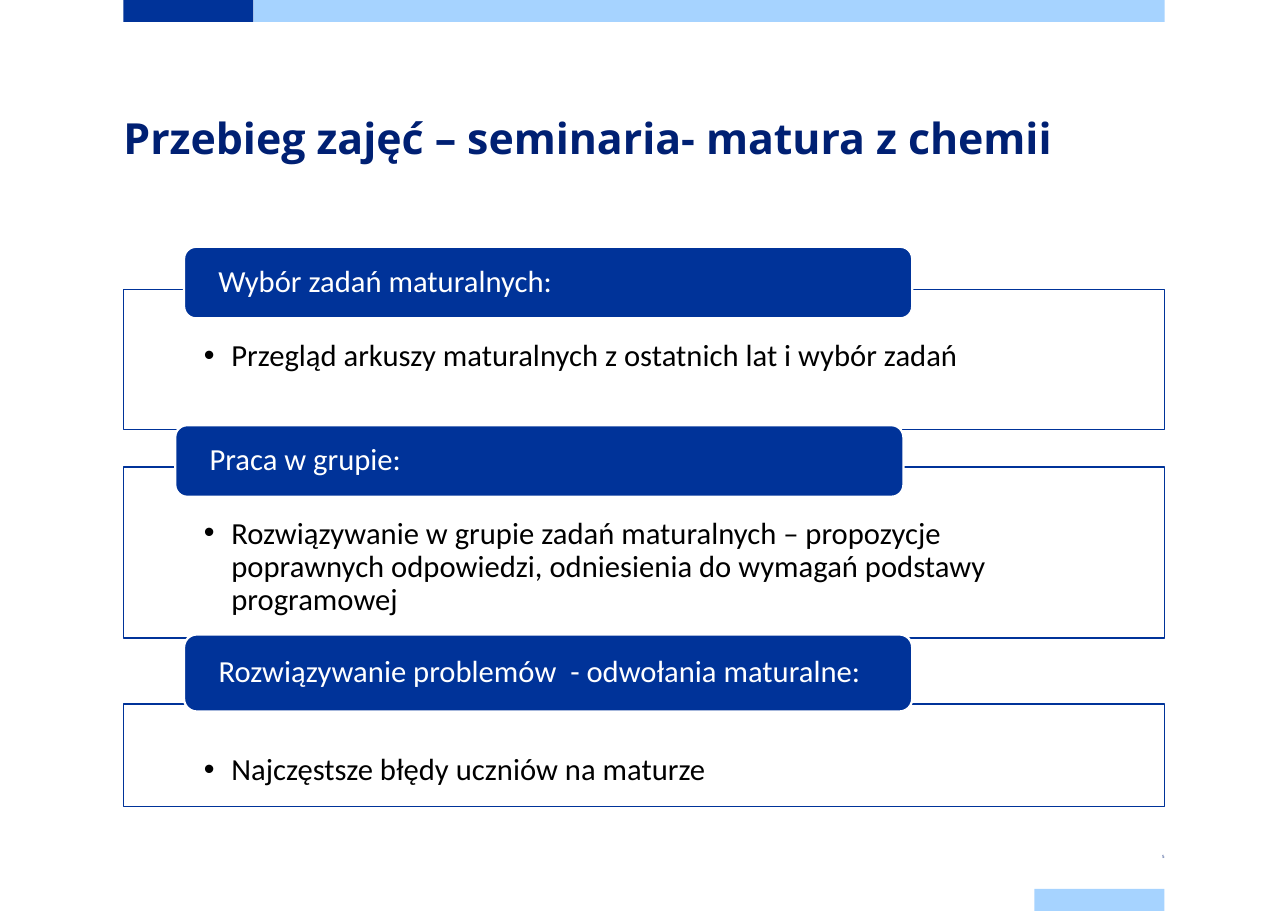
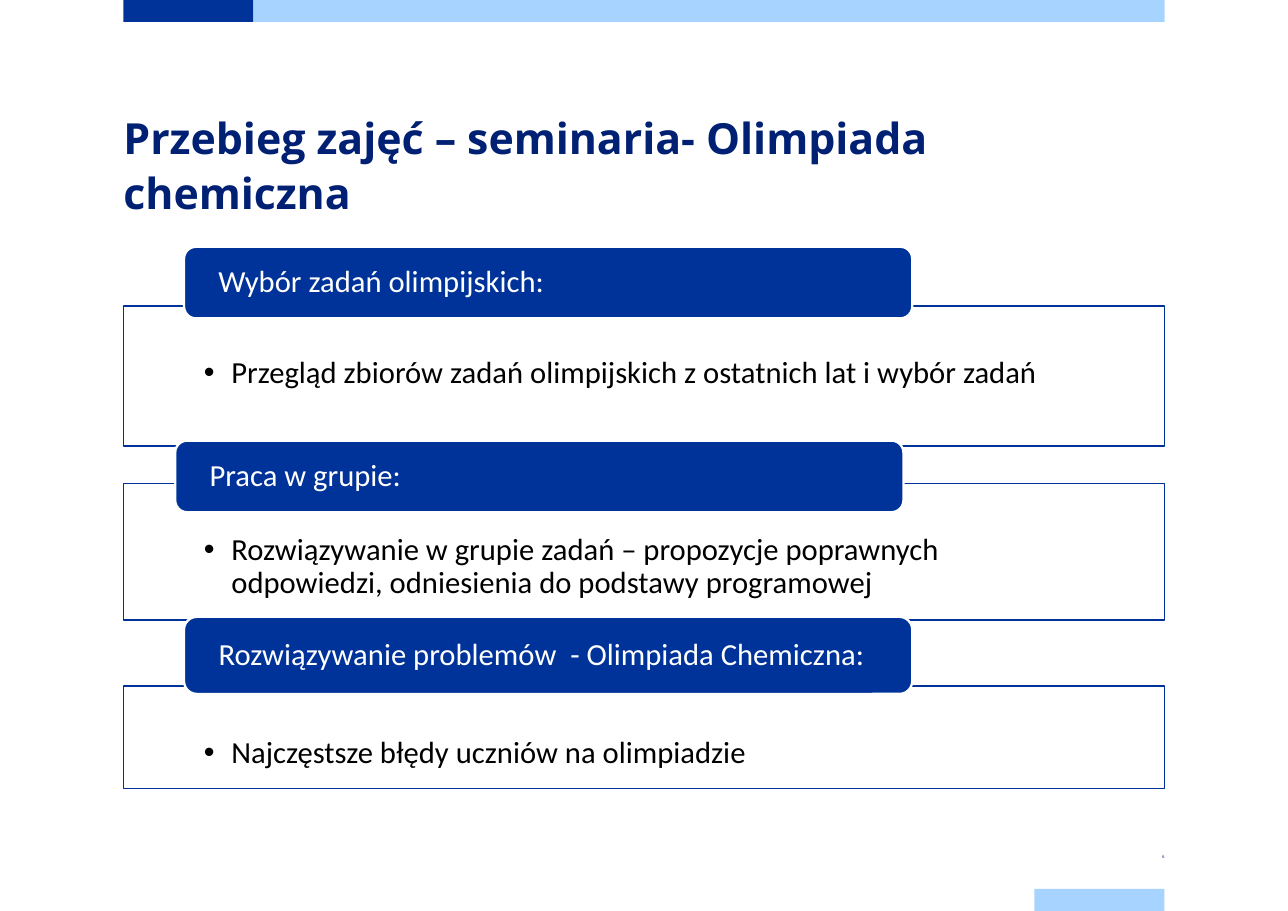
from pptx import Presentation
from pptx.dml.color import RGBColor
from pptx.enum.shapes import MSO_SHAPE as Kind
from pptx.enum.text import MSO_ANCHOR as Anchor, MSO_AUTO_SIZE as Fit, PP_ALIGN as Align
from pptx.oxml.ns import qn
from pptx.util import Inches, Pt
from lxml.etree import SubElement

# Each step: label, text, panel height, lift of the label above its panel
DECK = [
    dict(title="Przebieg zajęć – seminaria- matura z chemii", number=5, top=2.63, steps=[
        ("Wybór zadań maturalnych:",
         "Przegląd arkuszy maturalnych z ostatnich lat i wybór zadań", 1.27, 0.39),
        ("Praca w grupie:",
         "Rozwiązywanie w grupie zadań maturalnych – propozycje poprawnych odpowiedzi, "
         "odniesienia do wymagań podstawy programowej", 1.55, 0.38),
        ("Rozwiązywanie problemów  - odwołania maturalne:",
         "Najczęstsze błędy uczniów na maturze", 0.93, 0.63),
    ]),
    dict(title="Przebieg zajęć – seminaria- Olimpiada chemiczna", number=6, top=2.78, steps=[
        ("Wybór zadań olimpijskich:",
         "Przegląd zbiorów zadań olimpijskich z ostatnich lat i wybór zadań", 1.27, 0.54),
        ("Praca w grupie:",
         "Rozwiązywanie w grupie zadań – propozycje poprawnych odpowiedzi, "
         "odniesienia do podstawy programowej", 1.24, 0.39),
        ("Rozwiązywanie problemów  - Olimpiada Chemiczna:",
         "Najczęstsze błędy uczniów na olimpiadzie", 0.93, 0.63),
    ]),
]


class Theme:
    blue, sky, navy, white, black = "003399", "A6D3FF", "002073", "FFFFFF", "000000"
    title = dict(name="Open Sans", size=28, color=navy, bold=True)
    number = dict(name="Open Sans", size=2.8, color=navy)
    label = dict(name="Calibri", size=20, color=white)
    body = dict(name="Calibri", size=20, color=black)


WIDE, HIGH = 11.69, 8.27
LEFT, SPAN = 1.12, 9.45
COL, BAND = SPAN / 8, 0.2
LAST = LEFT + 7 * COL
GAPS = (0.34, 0.6, 0)          # below each panel
TABS = ((0.55, 0.65), (0.47, 0.65), (0.55, 0.7))   # label indent and height
TAB_W = 6.61


def place(shape, *box):
    for key, size in zip(("left", "top", "width", "height"), box):
        setattr(shape, key, Inches(size))


def draw(slide, kind, box, fill, line=None, weight=1):
    shape = slide.shapes.add_shape(kind, *map(Inches, box))
    shape.shadow.inherit = False
    shape.fill.solid()
    shape.fill.fore_color.rgb = RGBColor.from_string(fill)
    if line:
        shape.line.color.rgb = RGBColor.from_string(line)
        shape.line.width = Pt(weight)
    else:
        shape.line.fill.background()
    return shape


def write(shape, text, font, insets, anchor=Anchor.TOP, align=Align.LEFT,
          lead=0.9, bullet=False):
    frame = shape.text_frame
    frame.text = text
    sides = ("left", "top", "right", "bottom")
    look = {f"margin_{side}": Inches(gap) for side, gap in zip(sides, insets)}
    look.update(word_wrap=True, auto_size=Fit.NONE, vertical_anchor=anchor)
    for key, value in look.items():
        setattr(frame, key, value)
    para = frame.paragraphs[0]
    para.alignment, para.line_spacing = align, lead
    if bullet:
        props = para._p.get_or_add_pPr()
        props.set("marL", str(Inches(0.25)))
        props.set("indent", str(-Inches(0.25)))
        SubElement(props, qn("a:buFont"), typeface="Arial")
        SubElement(props, qn("a:buChar"), char="•")
    face = para.runs[0].font
    for key, value in font.items():
        if key == "color":
            face.color.rgb = RGBColor.from_string(value)
        else:
            setattr(face, key, Pt(value) if key == "size" else value)


def dress(layout, slide):
    """Move the shared bands into the layout, behind its placeholders."""
    bands = [(LEFT, 0, COL, Theme.blue), (LEFT + COL, 0, 7 * COL, Theme.sky),
             (LAST, HIGH - BAND, COL, Theme.sky)]
    for i, (left, top, width, fill) in enumerate(bands):
        band = draw(slide, Kind.RECTANGLE, (left, top, width, BAND), fill).element
        band.nvSpPr.cNvPr.set("id", str(20 + i))
        layout.shapes.element.insert(2 + i, band)


def stack(slide, top, steps):
    for (label, text, high, lift), gap, (dent, tall) in zip(steps, GAPS, TABS):
        panel = draw(slide, Kind.RECTANGLE, (LEFT, top, SPAN, high), Theme.white, Theme.blue)
        tint = panel.element.spPr.find(qn("a:solidFill"))[0]
        SubElement(tint, qn("a:alpha"), val="90000")
        write(panel, text, Theme.body, (0.73, 0.46, 0.73, 0.16), bullet=True)
        tab = draw(slide, Kind.ROUNDED_RECTANGLE, (LEFT + dent, top - lift, TAB_W, tall),
                   Theme.blue, Theme.white, 1.5)
        write(tab, label, Theme.label, (0.28, 0, 0.28, 0), Anchor.MIDDLE)
        top += high + gap


def main():
    prs = Presentation()
    prs.slide_width, prs.slide_height = Inches(WIDE), Inches(HIGH)
    layout = prs.slide_layouts.get_by_name("Title Only")
    place(layout.placeholders[0], LEFT, 0.98, SPAN, 1.18)
    for page in DECK:
        slide = prs.slides.add_slide(layout)
        if page is DECK[0]:
            dress(layout, slide)
        write(slide.shapes.title, page["title"], Theme.title, (0, 0, 0, 0), lead=Pt(36))
        box = slide.shapes.add_textbox(*map(Inches, (LAST, 7.68, COL, BAND)))
        write(box, str(page["number"]), Theme.number, (0, 0.08, 0, 0.08),
              Anchor.MIDDLE, Align.RIGHT, 0.7)
        stack(slide, page["top"], page["steps"])
    prs.save("out.pptx")


if __name__ == "__main__":
    main()
